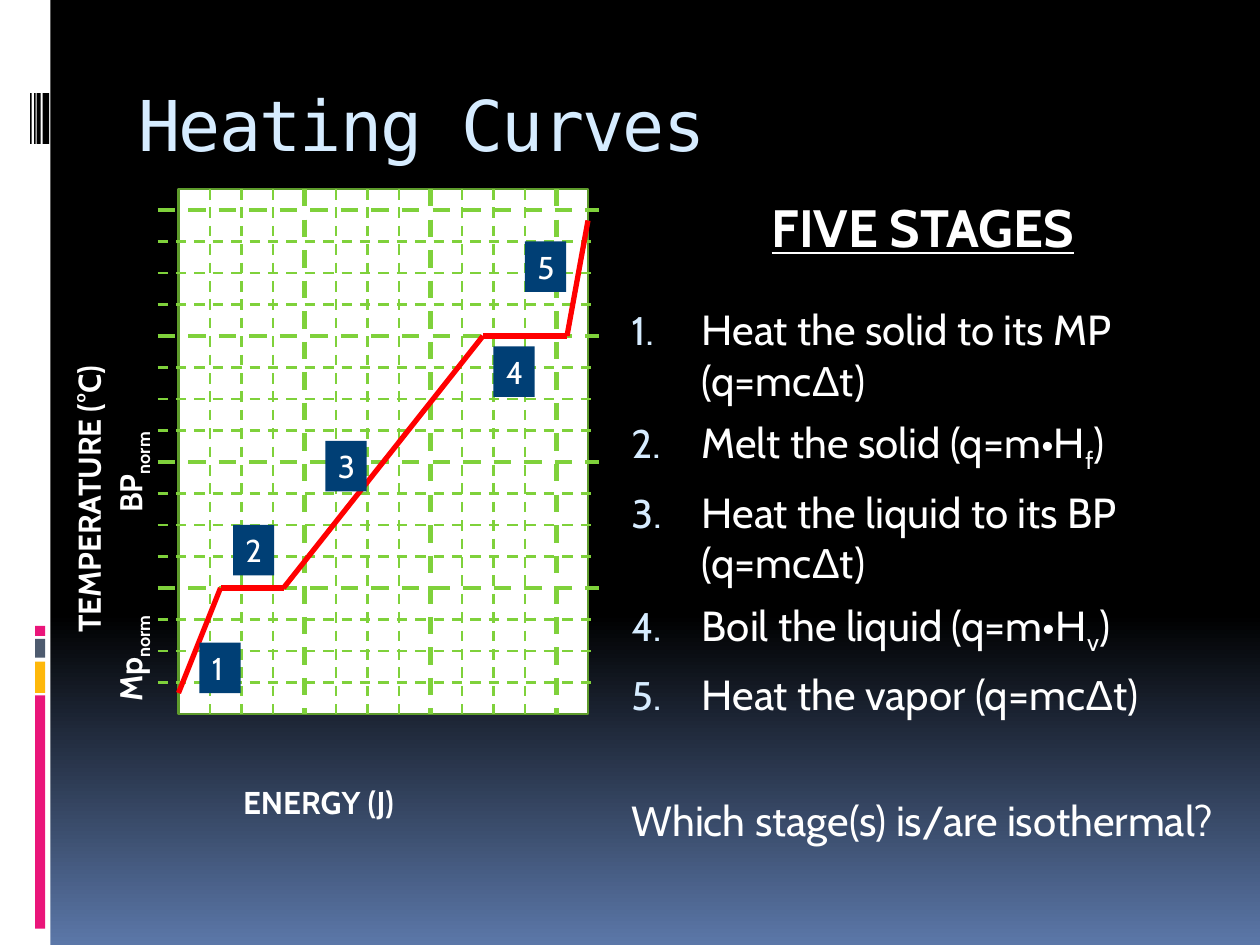
from itertools import pairwise

from lxml.etree import SubElement
from pptx import Presentation
from pptx.dml.color import RGBColor
from pptx.enum.dml import MSO_LINE
from pptx.enum.shapes import MSO_CONNECTOR, MSO_SHAPE
from pptx.enum.text import MSO_AUTO_SIZE, PP_ALIGN
from pptx.oxml.ns import qn
from pptx.util import Cm, Pt

WHITE = RGBColor(0xFF, 0xFF, 0xFF)
BLACK = RGBColor(0x00, 0x00, 0x00)
SKY = RGBColor(0x5B, 0x77, 0xA8)
PALE = RGBColor(0xD6, 0xEC, 0xFF)
PINK = RGBColor(0xEA, 0x15, 0x7A)
AMBER = RGBColor(0xFE, 0xB8, 0x0A)
SLATE = RGBColor(0x4E, 0x5B, 0x6F)
GREEN = RGBColor(0x7F, 0xD1, 0x3B)
DARK_GREEN = RGBColor(0x5E, 0x9B, 0x2C)
RED = RGBColor(0xFF, 0x00, 0x00)
NAVY = RGBColor(0x00, 0x3F, 0x75)

UNIT = 2.54 / 12  # the graph is laid out in twelfths of an inch, in cm
LEFT, TOP, RIGHT, BOTTOM = 17, 18, 56, 68  # plot area, in units
CURVE = [(17, 66), (21, 56), (27, 56), (46, 32), (54, 32), (56, 21)]
STAGE_MARKS = [(19, 61.2), (22.2, 50), (31, 42), (47, 33), (50, 23)]

SUB, ARIAL = "sub", "arial"
WARMING = [("Δ", ARIAL), "t)"]
STAGES = [
    ["Heat the solid to its MP (q=mc", *WARMING],
    ["Melt the solid (q=m•H", ("f", SUB), ")"],
    ["Heat the liquid to its BP (q=mc", *WARMING],
    ["Boil the liquid (q=m•H", ("v", SUB), ")"],
    ["Heat the vapor (q=mc", *WARMING],
]


class SlideBuilder:
    """Draws on one page; all lengths are in centimetres."""

    font = "Cabin"

    def __init__(self, page):
        self.page = page

    def background(self):
        fill = self.page.background.fill
        fill.gradient()
        fill.gradient_angle = 270
        for stop, position, color in zip(fill.gradient_stops, (0.65, 1), (BLACK, SKY)):
            stop.position = position
            stop.color.rgb = color

    def rect(self, x, y, width, height, fill, outline=None):
        shape = self.page.shapes.add_shape(
            MSO_SHAPE.RECTANGLE, Cm(x), Cm(y), Cm(width), Cm(height))
        shape.shadow.inherit = False
        shape.fill.solid()
        shape.fill.fore_color.rgb = fill
        if outline:
            shape.line.color.rgb = outline
            shape.line.width = Pt(1.5)
        else:
            shape.line.fill.background()

    def line(self, start, end, color, width, dash=None):
        """Joins two points given in graph units."""
        ends = [Cm(value * UNIT) for value in (*start, *end)]
        connector = self.page.shapes.add_connector(MSO_CONNECTOR.STRAIGHT, *ends)
        connector.line.color.rgb = color
        connector.line.width = Pt(width)
        if dash:
            connector.line.dash_style = dash
        SubElement(connector._element.spPr, qn("a:effectLst"))

    def box(self, x, y, width, height, wrap=True):
        box = self.page.shapes.add_textbox(Cm(x), Cm(y), Cm(width), Cm(height))
        box.text_frame.word_wrap = wrap
        if not wrap:
            box.text_frame.auto_size = MSO_AUTO_SIZE.SHAPE_TO_FIT_TEXT
        return box

    def add_text(self, paragraph, spans, size, color=WHITE, bold=False, font=None):
        """Fills a paragraph with strings or (string, SUB or ARIAL) pairs."""
        style = paragraph.font
        style.name = font or self.font
        style.size = Pt(size)
        style.bold = bold
        style.color.rgb = color
        for item in spans:
            text, kind = (item, None) if isinstance(item, str) else item
            span = paragraph.add_run()
            span.text = text
            if kind == SUB:
                span.font._element.set("baseline", "-25000")
            elif kind == ARIAL:
                span.font.name = "Arial"

    def label(self, x, y, width, height, text, bold=True, fill=None):
        box = self.box(x, y, width, height, wrap=False)
        if fill:
            box.fill.solid()
            box.fill.fore_color.rgb = fill
        self.add_text(box.text_frame.paragraphs[0], [text], 18, bold=bold)
        return box

    def indent(self, paragraph, margin, hanging, before, numbered=False):
        paragraph.space_before = Pt(before)
        properties = paragraph._p.get_or_add_pPr()
        properties.set("marL", str(Cm(margin)))
        properties.set("indent", str(-Cm(hanging)))
        if numbered:
            color = SubElement(properties, qn("a:buClr"))
            SubElement(color, qn("a:srgbClr"), val=str(PALE))
            SubElement(properties, qn("a:buSzPct"), val="95000")
            SubElement(properties, qn("a:buAutoNum"), type="arabicPeriod")


def draw_sidebar(slide):
    slide.rect(0, 0, 1.02, 19.05, WHITE)
    for y, height, color in [(14.02, 4.7, PINK), (13.34, 0.63, AMBER),
                             (12.88, 0.38, SLATE), (12.62, 0.2, PINK)]:
        slide.rect(0.71, y, 0.2, height, color)
    for x, width in [(0.86, 0.13), (0.74, 0.08), (0.69, 0.03), (0.61, 0.03)]:
        slide.rect(x, 1.88, width, 1.02, BLACK)


def draw_title(slide):
    frame = slide.box(2.54, 1.42, 21.59, 2.54).text_frame
    frame.margin_top = Cm(0.23)
    slide.add_text(frame.paragraphs[0], ["Heating Curves"], 40, PALE, font="DejaVu Sans Mono")
    frame.paragraphs[0].runs[0].font._element.set("spc", "-100")


def draw_stages(slide):
    frame = slide.box(12.27, 3.81, 12.5, 13.77).text_frame
    heading = frame.paragraphs[0]
    heading.alignment = PP_ALIGN.CENTER
    slide.indent(heading, 1.14, 0.97, 7)
    slide.add_text(heading, ["FIVE STAGES"], 30, bold=True)
    heading.font.underline = True
    for index, spans in enumerate(STAGES):
        stage = frame.add_paragraph()
        slide.indent(stage, 1.63, 1.42, 7 if index else 26, numbered=True)
        slide.add_text(stage, spans, 24)
    question = frame.add_paragraph()
    slide.indent(question, 1.63, 1.42, 43)
    slide.add_text(question, ["Which stage(s) is/are isothermal?"], 24)


def draw_axis_labels(slide):
    slide.label(4.65, 15.67, 3.73, 1.02, "ENERGY (J)")
    slide.label(-1.24, 9.47, 6.05, 1.02, "TEMPERATURE (°C)").rotation = 270
    frame = slide.box(2.11, 5.18, 1.27, 10.49).text_frame
    frame._txBody.bodyPr.set("vert", "vert270")
    spans = ["\tMp", ("norm\t\t", SUB), "BP", ("norm", SUB)]
    slide.add_text(frame.paragraphs[0], spans, 18, bold=True)


def draw_graph(slide):
    slide.rect(LEFT * UNIT, TOP * UNIT, (RIGHT - LEFT) * UNIT, (BOTTOM - TOP) * UNIT,
               WHITE, DARK_GREEN)
    # Every fourth grid line is heavy.
    for y in range(20, BOTTOM, 3):
        weight = 2.5 if y % 12 == 8 else 1.5
        slide.line((LEFT - 2, y), (RIGHT + 1, y), GREEN, weight, MSO_LINE.DASH)
    for x in range(20, RIGHT, 3):
        weight = 2.5 if x % 12 == 5 else 1.5
        slide.line((x, TOP), (x, BOTTOM), GREEN, weight, MSO_LINE.DASH)
    for start, end in pairwise(CURVE):
        slide.line(start, end, RED, 3)
    for number, (x, y) in enumerate(STAGE_MARKS, 1):
        slide.label(x * UNIT, y * UNIT, 0.83, 1.02, str(number), bold=False, fill=NAVY)


def main():
    deck = Presentation()
    deck.slide_width, deck.slide_height = Cm(25.4), Cm(19.05)
    slide = SlideBuilder(deck.slides.add_slide(deck.slide_layouts[6]))
    slide.background()
    draw_sidebar(slide)
    draw_title(slide)
    draw_stages(slide)
    draw_axis_labels(slide)
    draw_graph(slide)
    deck.save("out.pptx")


if __name__ == "__main__":
    main()
